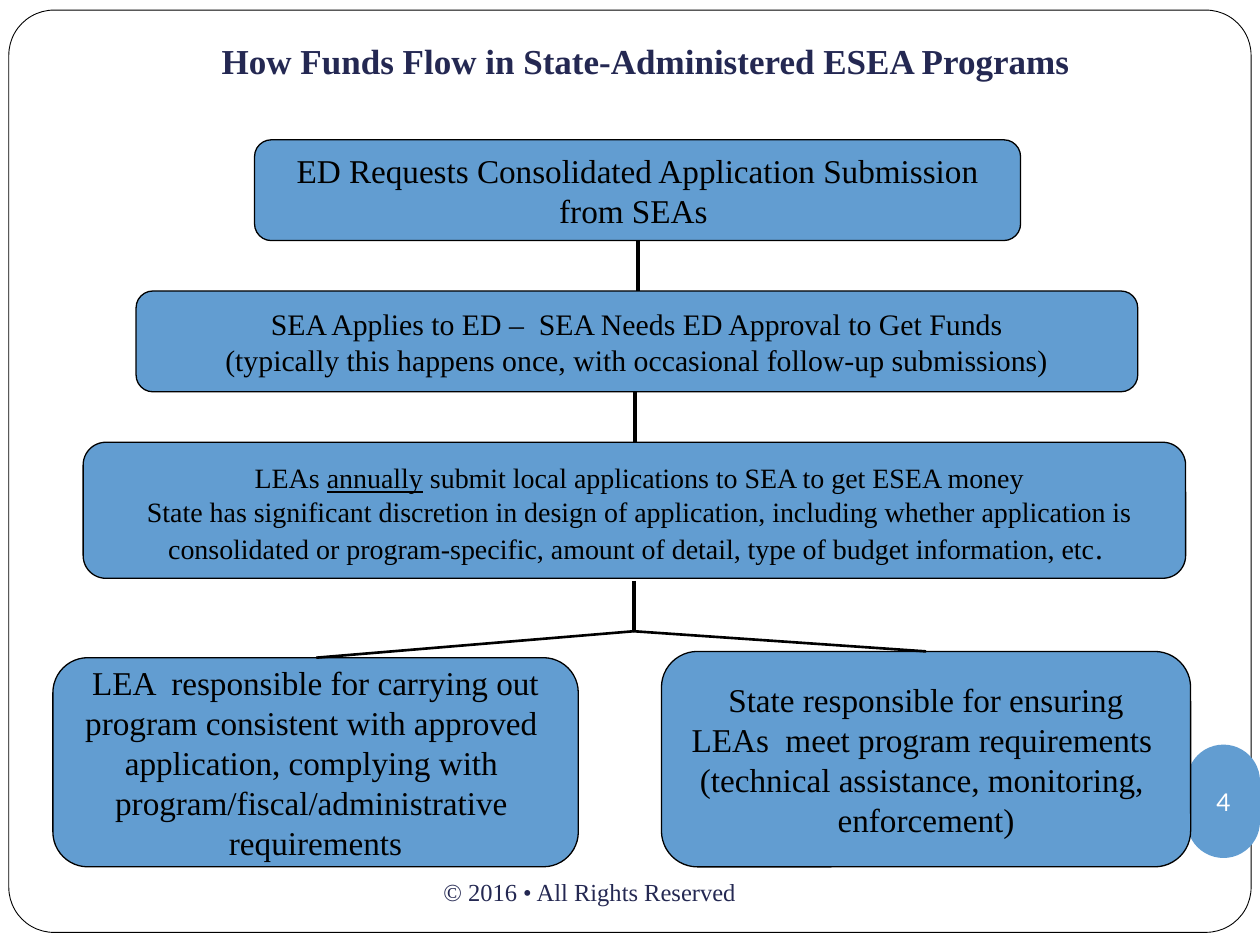
from lxml.etree import SubElement
from pptx import Presentation
from pptx.dml.color import RGBColor
from pptx.enum.shapes import MSO_CONNECTOR, MSO_SHAPE
from pptx.enum.text import MSO_ANCHOR, MSO_AUTO_SIZE, PP_ALIGN
from pptx.oxml.ns import qn
from pptx.util import Inches, Pt

BLACK, WHITE, BLUE, NAVY = "000000", "FFFFFF", "629DD1", "242852"
SERIF = "Times New Roman"


def color(value):
    return RGBColor.from_string(value)


class FlowPage:
    """Draws the elements of a flow chart on one page."""

    def __init__(self, deck):
        self.page = deck.slides.add_slide(deck.slide_layouts[5])
        self.shapes = self.page.shapes

    def set_text(self, shape, lines, size, ink=BLACK, font=SERIF, bold=False,
                 align=PP_ALIGN.CENTER, anchor=MSO_ANCHOR.MIDDLE,
                 insets=(0, 0, 0, 0), wrap=True):
        """Fill a shape with lines; a line is a string or a list of strings, one per run."""
        frame = shape.text_frame
        frame.auto_size = MSO_AUTO_SIZE.NONE
        frame.word_wrap = wrap
        frame.vertical_anchor = anchor
        (frame.margin_left, frame.margin_top,
         frame.margin_right, frame.margin_bottom) = map(Inches, insets)
        for index, line in enumerate(lines):
            para = frame.add_paragraph() if index else frame.paragraphs[0]
            para.alignment = align
            para.font.name = font
            para.font.size = Pt(size)
            para.font.bold = bold
            para.font.color.rgb = color(ink)
            for text in [line] if isinstance(line, str) else line:
                para.add_run().text = text
        return frame

    def title(self, text, *place):
        title = self.shapes.title
        title.left, title.top, title.width, title.height = map(Inches, place)
        self.set_text(title, [text], 20, NAVY, bold=True,
                      anchor=MSO_ANCHOR.BOTTOM, insets=(0.1, 0.05, 0.1, 0.1))
        # The title stands in front of the frame drawn before it.
        self.shapes._spTree.append(title._element)

    def shape(self, kind, place, rounding, fill, line_width=None):
        shape = self.shapes.add_shape(kind, *map(Inches, place))
        shape.shadow.inherit = False
        shape.adjustments[0] = rounding
        shape.fill.solid()
        shape.fill.fore_color.rgb = color(fill)
        if line_width:
            shape.line.color.rgb = color(BLACK)
            shape.line.width = Pt(line_width)
        else:
            shape.line.fill.background()
        return shape

    def step(self, place, lines=(), size=19):
        box = self.shape(MSO_SHAPE.ROUNDED_RECTANGLE, place, 0.167, BLUE, 0.75)
        if lines:
            self.set_text(box, lines, size, wrap=False)

    def label(self, place, lines, size, **style):
        box = self.shapes.add_textbox(*map(Inches, place))
        return self.set_text(box, lines, size, insets=(0.1, 0.05, 0.1, 0.05), **style)

    def line(self, start, end, width):
        line = self.shapes.add_connector(MSO_CONNECTOR.STRAIGHT, *map(Inches, start + end))
        line.line.color.rgb = color(BLACK)
        line.line.width = Pt(width)
        SubElement(line._element.spPr, qn("a:effectLst"))


def main():
    deck = Presentation()
    deck.slide_width, deck.slide_height = Inches(10), Inches(7.5)
    flow = FlowPage(deck)

    flow.shape(MSO_SHAPE.ROUNDED_RECTANGLE, (0.07, 0.08, 9.86, 7.32), 0.049, WHITE, 0.5)
    flow.title("How Funds Flow in State-Administered ESEA Programs", 1.25, 0.17, 7.75, 0.58)
    flow.label((3.42, 6.83, 3.17, 0.5), ["© 2016 • All Rights Reserved"], 14,
               ink=NAVY, align=PP_ALIGN.LEFT)
    badge = flow.shape(MSO_SHAPE.DOUBLE_BRACKET, (9.42, 5.91, 0.58, 0.9), 0.5, BLUE)
    flow.set_text(badge, ["4"], 14, WHITE, "Lato", wrap=False)

    flow.step((2.02, 1.11, 6.08, 0.8),
              ["ED Requests Consolidated Application Submission", "from SEAs "])
    flow.step((1.08, 2.31, 7.95, 0.8),
              ["SEA Applies to ED –  SEA Needs ED Approval to Get Funds",
               "(typically this happens once, with occasional follow-up submissions)"], 17)
    flow.step((0.66, 3.51, 8.75, 1.08))
    flow.step((0.42, 5.22, 4.17, 1.66),
              ["LEA  responsible for carrying out",
               "program consistent with approved ",
               "application, complying with ",
               "program/fiscal/administrative ",
               "requirements"])
    flow.step((5.25, 5.17, 4.2, 1.71),
              ["State responsible for ensuring",
               "LEAs  meet program requirements ",
               "(technical assistance, monitoring, ",
               "enforcement)"])

    local = flow.label(
        (0.7, 3.61, 8.75, 0.94),
        [["LEAs ", "annually", " submit local applications to SEA to get ESEA money"],
         "State has significant discretion in design of application, "
         "including whether application is",
         ["consolidated or program-specific, amount of detail, "
          "type of budget information, etc", ". "]],
        16, anchor=MSO_ANCHOR.TOP)
    local.paragraphs[0].runs[1].font.underline = True
    local.paragraphs[2].runs[1].font.size = Pt(18)

    for x, top in ((5.06, 1.91), (5.04, 3.11), (5.03, 4.61)):
        flow.line((x, top), (x, top + 0.4), 2.25)
    fork = (5.03, 5.01)
    for branch in ((2.51, 5.22), (7.35, 5.17)):
        flow.line(fork, branch, 1.5)

    deck.save("out.pptx")


if __name__ == "__main__":
    main()
